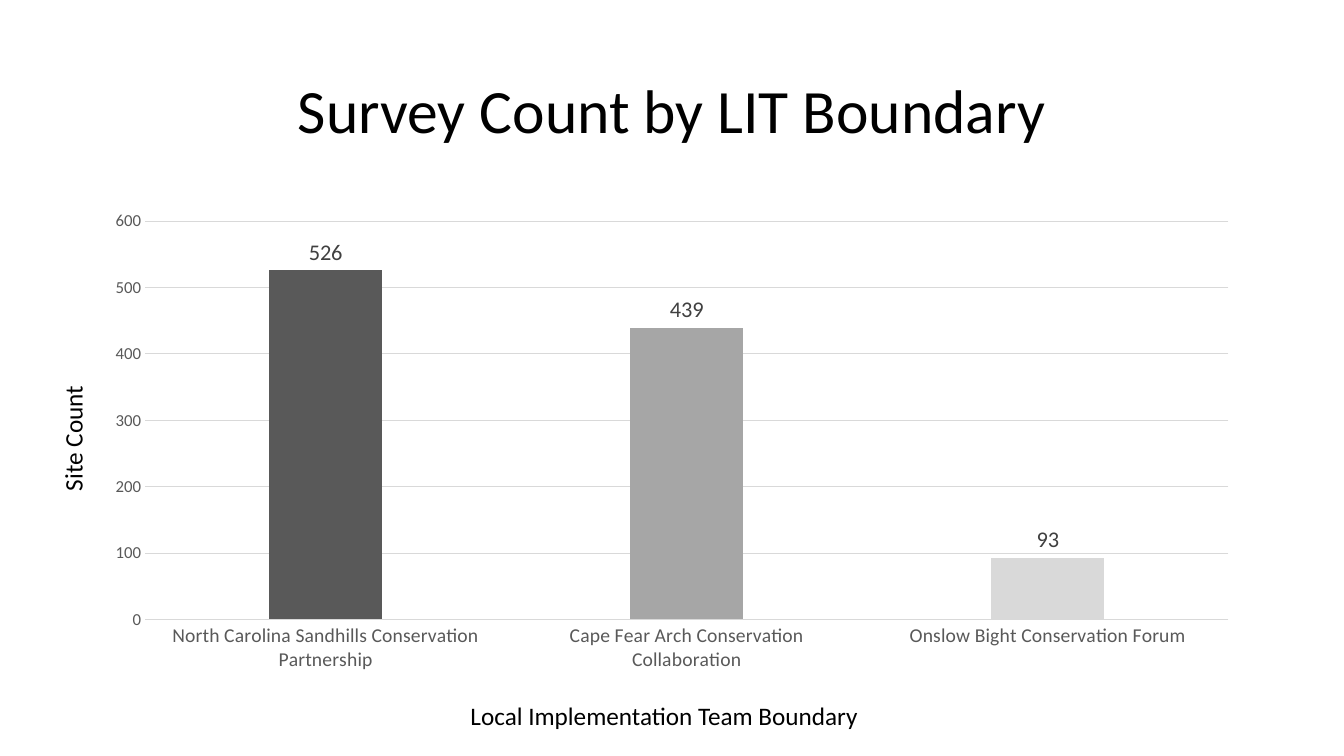
import pptx
import pptx.chart.data
import pptx.dml.color
import pptx.enum.chart
import pptx.enum.text
import pptx.util

Pt = pptx.util.Pt
RGBColor = pptx.dml.color.RGBColor

FONT = "Calibri"
BLACK = RGBColor(0x00, 0x00, 0x00)
LABEL_GRAY = RGBColor(0x40, 0x40, 0x40)
AXIS_GRAY = RGBColor(0x59, 0x59, 0x59)
GRID_GRAY = RGBColor(0xD9, 0xD9, 0xD9)
SERIES_GRAY = RGBColor(0x80, 0x80, 0x80)
MID_GRAY = RGBColor(0xA6, 0xA6, 0xA6)

SURVEY_COUNTS = [
    ("North Carolina Sandhills Conservation Partnership", 526, AXIS_GRAY),
    ("Cape Fear Arch Conservation Collaboration", 439, MID_GRAY),
    ("Onslow Bight Conservation Forum", 93, GRID_GRAY),
]


def style_font(font, size, color):
    """Apply the slide's typeface with a size and colour."""
    font.name = FONT
    font.size = Pt(size)
    font.bold = False
    font.color.rgb = color


def write_text(frame, text, size=18, color=BLACK, align=None, spacing=None):
    """Write one formatted paragraph into a text frame."""
    paragraph = frame.paragraphs[0]
    paragraph.alignment = align
    paragraph.line_spacing = spacing
    run = paragraph.add_run()
    run.text = text
    style_font(run.font, size, color)


def place_title(slide, left, top, width, height):
    """Move the title placeholder into its box and fill it."""
    title = slide.shapes.title
    title.left, title.top = Pt(left), Pt(top)
    title.width, title.height = Pt(width), Pt(height)
    title.text_frame.vertical_anchor = pptx.enum.text.MSO_ANCHOR.MIDDLE
    write_text(title.text_frame, "Survey Count by LIT Boundary", size=44,
               align=pptx.enum.text.PP_ALIGN.CENTER, spacing=0.9)


def add_axis_caption(slide, text, left, top, width, height, rotation=0):
    """Add the caption of one axis in the given box."""
    caption = slide.shapes.add_textbox(Pt(left), Pt(top), Pt(width), Pt(height))
    caption.rotation = rotation
    caption.text_frame.word_wrap = True
    caption.text_frame.auto_size = pptx.enum.text.MSO_AUTO_SIZE.SHAPE_TO_FIT_TEXT
    write_text(caption.text_frame, text)


def style_axis(axis, size):
    """Remove the tick marks of an axis and format its labels."""
    axis.major_tick_mark = pptx.enum.chart.XL_TICK_MARK.NONE
    axis.minor_tick_mark = pptx.enum.chart.XL_TICK_MARK.NONE
    style_font(axis.tick_labels.font, size, AXIS_GRAY)


def add_survey_chart(slide, left, top, width, height):
    """Add the column chart of survey counts in the given box."""
    data = pptx.chart.data.CategoryChartData()
    data.categories = [boundary for boundary, _, _ in SURVEY_COUNTS]
    data.add_series("Series 1", [count for _, count, _ in SURVEY_COUNTS])
    chart = slide.shapes.add_chart(
        pptx.enum.chart.XL_CHART_TYPE.COLUMN_CLUSTERED,
        Pt(left), Pt(top), Pt(width), Pt(height), data).chart
    chart.has_legend = False
    chart.has_title = False
    style_font(chart.font, 10, BLACK)

    style_axis(chart.category_axis, 14)
    style_axis(chart.value_axis, 12)
    chart.value_axis.minimum_scale = 0
    chart.value_axis.maximum_scale = 600
    chart.value_axis.major_unit = 100
    chart.value_axis.format.line.fill.background()
    for line in (chart.category_axis.format.line,
                 chart.value_axis.major_gridlines.format.line):
        line.color.rgb = GRID_GRAY
        line.width = Pt(0.75)

    plot = chart.plots[0]
    plot.vary_by_categories = False
    plot.gap_width = 219
    plot.overlap = -27
    counts = plot.series[0]
    counts.format.fill.solid()
    counts.format.fill.fore_color.rgb = SERIES_GRAY
    for index, (_, _, color) in enumerate(SURVEY_COUNTS):
        fill = counts.points[index].format.fill
        fill.solid()
        fill.fore_color.rgb = color
    labels = counts.data_labels
    labels.show_value = True
    labels.position = pptx.enum.chart.XL_LABEL_POSITION.OUTSIDE_END
    style_font(labels.font, 16, LABEL_GRAY)


def build_survey_slide(deck):
    """Build the survey count slide."""
    slide = deck.slides.add_slide(deck.slide_layouts[5])
    place_title(slide, 66, 28.75, 828, 104.4)
    add_axis_caption(slide, "Site Count", 2.16, 293.76, 99.36, 28.8, rotation=270)
    add_axis_caption(slide, "Local Implementation Team Boundary", 329, 496.8, 302.4, 51)
    add_survey_chart(slide, 66, 144, 828, 342.7)


def main():
    """Create and save the presentation."""
    deck = pptx.Presentation()
    deck.slide_width, deck.slide_height = Pt(960), Pt(540)
    build_survey_slide(deck)
    deck.save("out.pptx")


if __name__ == "__main__":
    main()
